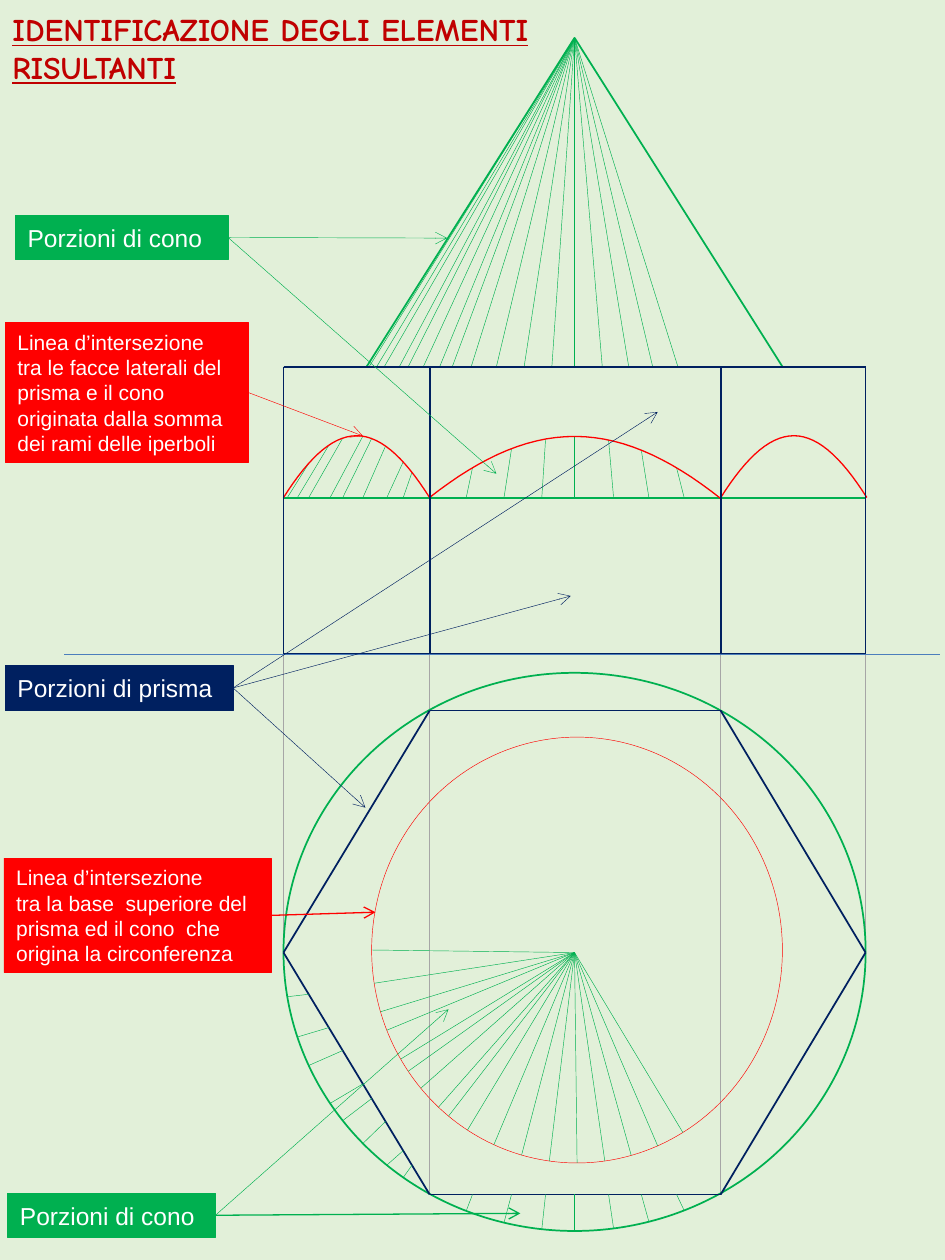
import math
import pptx
import pptx.dml.color
import pptx.enum.shapes
import pptx.enum.text
import pptx.oxml
import pptx.oxml.ns
import pptx.util

COLUMNS, ROWS = 750, 1000
COLORS = {"background": "E2F0D9", "cone": "00B050", "prism": "002060", "cut": "FF0000",
          "projection": "A6A6A6", "ground": "4B7EBC", "title": "C00000", "label": "FFFFFF"}
FINE, MEDIUM, BOLD = 0.25, 0.75, 1

# Regions: left, top, width, height in grid columns and rows
ELEVATION = (225, 30, 462, 489)
PLAN = (225, 534, 462, 443)
GROUND = (51, 519, 695, 0)
TITLE = (0, 3, 447, 71)

# Plan geometry, measured from the corner of the plan box
CENTER = (231, 222)
HEXAGON = [(0, 222), (116, 30), (347, 30), (462, 222), (347, 414), (116, 414)]
CUT_CIRCLE = (70, 51, 326, 338)
RAY_COLUMNS = [70, 72, 77, 82, 93, 99, 109, 123, 131, 146, 167, 189, 211,
               233, 255, 276, 297, 317]
GENERATOR_COLUMNS = [68, 74, 80, 92, 99, 111, 124, 134, 149, 169, 191, 213,
                     231, 253, 274, 293, 313]
# Cone portions outside the prism: column on the prism face, column on the base circle
SIDE_PORTIONS = [(20, 3), (36, 11), (47, 20), (63, 37), (70, 47), (81, 63), (95, 82), (102, 95)]
FRONT_PORTIONS = [(150, 145), (181, 175), (208, 205), (231, 231), (258, 262), (284, 290), (312, 318)]
# Elevation rows, measured from the apex
ROOF, CONE_BASE, FLOOR = 261, 365, 489

LABELS = [  # box, text, size, colour, arrows as (column, row, weight)
    ((12, 171, 169, 35), ["Porzioni di cono"], 14, "cone", [(355, 189, FINE), (394, 376, FINE)]),
    ((4, 256, 193, 111),
     ["Linea d’intersezione",
      "tra le facce laterali del prisma e il cono originata dalla somma dei rami delle iperboli"],
     12, "cut", [(288, 346, FINE)]),
    ((4, 528, 181, 36), ["Porzioni di prisma"], 14, "prism",
     [(453, 473, FINE), (290, 641, FINE), (522, 327, FINE)]),
    ((3, 681, 212, 91),
     ["Linea d’intersezione",
      "tra la base  superiore del prisma ed il cono  che origina la circonferenza"],
     12, "cut", [(298, 724, MEDIUM)]),
    ((6, 947, 165, 35), ["Porzioni di cono"], 14, "cone", [(356, 801, FINE), (413, 963, MEDIUM)]),
]

presentation = pptx.Presentation()
presentation.slide_width = pptx.util.Inches(7.5)
presentation.slide_height = pptx.util.Inches(10)
slide = presentation.slides.add_slide(presentation.slide_layouts[6])


def rgb(name):
    return pptx.dml.color.RGBColor.from_string(COLORS[name])


def place(box, column, row):
    return (round((box[0] + column) * presentation.slide_width / COLUMNS),
            round((box[1] + row) * presentation.slide_height / ROWS))


def extent(width, height):
    return place((0, 0), width, height)


def apply_format(target, values):
    for name, value in values.items():
        setattr(target, name, value)


def set_line(line, color, weight):
    line.color.rgb = rgb(color)
    line.width = pptx.util.Pt(weight)


def add_line(box, start, end, color, weight=FINE, arrow=False):
    connector = slide.shapes.add_connector(
        pptx.enum.shapes.MSO_CONNECTOR.STRAIGHT, *place(box, *start), *place(box, *end))
    set_line(connector.line, color, weight)
    properties = connector._element.spPr
    if arrow:
        properties.find(pptx.oxml.ns.qn("a:ln")).append(
            pptx.oxml.parse_xml(f'<a:tailEnd {pptx.oxml.ns.nsdecls("a")} type="arrow"/>'))
    properties.append(pptx.oxml.parse_xml(f'<a:effectLst {pptx.oxml.ns.nsdecls("a")}/>'))


def add_ellipse(box, area, color, weight):
    shape = slide.shapes.add_shape(pptx.enum.shapes.MSO_SHAPE.OVAL,
                                   *place(box, *area[:2]), *extent(*area[2:]))
    shape.shadow.inherit = False
    shape.fill.background()
    set_line(shape.line, color, weight)


def add_curve(box, points, color, weight):
    first, *others = [place(box, *point) for point in points]
    builder = slide.shapes.build_freeform(*first)
    builder.add_line_segments(others, close=False)
    shape = builder.convert_to_shape()
    shape.shadow.inherit = False
    shape.fill.background()
    set_line(shape.line, color, weight)


def write_text(shape, paragraphs, color, font_format):
    shape.text_frame.word_wrap = True
    shape.text_frame.text = "\n".join(paragraphs)
    for paragraph in shape.text_frame.paragraphs:
        paragraph.alignment = pptx.enum.text.PP_ALIGN.LEFT
        for run in paragraph.runs:
            apply_format(run.font, font_format)
            run.font.color.rgb = rgb(color)


def lower_row(area, column):
    """Row where a column meets the lower half of an ellipse."""
    left, top, width, height = area
    share = (column - left - width / 2) / (width / 2)
    return top + height / 2 * (1 + math.sqrt(max(0, 1 - share ** 2)))


def face_row(column):
    """Plan row of the prism's lower left and front faces."""
    (left, top), (corner, bottom) = HEXAGON[0], HEXAGON[5]
    return min(bottom, top + (column - left) * (bottom - top) / (corner - left))


def cone_row(column):
    """Elevation row of the cone above a point of a prism face."""
    across = (column - CENTER[0]) / (PLAN[2] / 2)
    along = (face_row(column) - CENTER[1]) / (PLAN[3] / 2)
    return CONE_BASE * math.hypot(across, along)


def draw_elevation(box):
    apex = (CENTER[0], 0)
    left, first, second, right = 0, HEXAGON[5][0], HEXAGON[4][0], box[2]
    # Cone
    add_line(box, (left, CONE_BASE), (right, CONE_BASE), "cone", BOLD)
    for column in (66, 396):
        add_line(box, apex, (column, ROOF), "cone", BOLD)
    for column in GENERATOR_COLUMNS:
        add_line(box, apex, (column, ROOF), "cone")
    for inner, outer in SIDE_PORTIONS + FRONT_PORTIONS:
        add_line(box, (inner, cone_row(inner)), (outer, CONE_BASE), "cone")
    # Hyperbola branches on the three visible faces
    for start, end, shift in ((left, first, 0), (first, second, 0), (left, first, second)):
        columns = [start + (end - start) * step / 30 for step in range(31)]
        add_curve(box, [(column + shift, cone_row(column)) for column in columns], "cut", MEDIUM)
    # Prism
    for row in (ROOF, FLOOR):
        add_line(box, (left, row), (right, row), "prism", BOLD)
    for column in (left, first, second, right):
        add_line(box, (column, ROOF), (column, FLOOR), "prism", BOLD)


def draw_plan(box):
    base = (0, 0, box[2], box[3])
    # Projection lines from the ground line
    for column, row in (HEXAGON[0], *HEXAGON[3:]):
        add_line(box, (column, GROUND[1] - box[1]), (column, row), "projection")
    # Cone base and prism
    add_ellipse(box, base, "cone", BOLD)
    for start, end in zip(HEXAGON, HEXAGON[1:] + HEXAGON[:1]):
        add_line(box, start, end, "prism", BOLD)
    # Circle cut by the top face, with the cone's rays
    add_ellipse(box, CUT_CIRCLE, "cut", FINE)
    for column in RAY_COLUMNS:
        add_line(box, CENTER, (column, lower_row(CUT_CIRCLE, column)), "cone")
    for inner, outer in SIDE_PORTIONS + FRONT_PORTIONS:
        add_line(box, (inner, face_row(inner)), (outer, lower_row(base, outer)), "cone")


def draw_title(box):
    shape = slide.shapes.add_textbox(*place(box, 0, 0), *extent(*box[2:]))
    write_text(shape, ["IDENTIFICAZIONE DEGLI ELEMENTI RISULTANTI"], "title",
               {"name": "Comic Neue", "size": pptx.util.Pt(18), "bold": True, "underline": True})


def draw_label(box, paragraphs, size, color, arrows):
    shape = slide.shapes.add_shape(pptx.enum.shapes.MSO_SHAPE.RECTANGLE,
                                   *place(box, 0, 0), *extent(*box[2:]))
    shape.shadow.inherit = False
    shape.fill.solid()
    shape.fill.fore_color.rgb = rgb(color)
    set_line(shape.line, color, FINE)
    write_text(shape, paragraphs, "label", {"name": "Arial", "size": pptx.util.Pt(size)})
    for column, row, weight in arrows:
        add_line(box, (box[2], box[3] / 2), (column - box[0], row - box[1]), color, weight, True)


slide.background.fill.solid()
slide.background.fill.fore_color.rgb = rgb("background")
draw_plan(PLAN)
draw_elevation(ELEVATION)
add_line(GROUND, (0, 0), GROUND[2:], "ground")
draw_title(TITLE)
for label in LABELS:
    draw_label(*label)
presentation.save("out.pptx")
